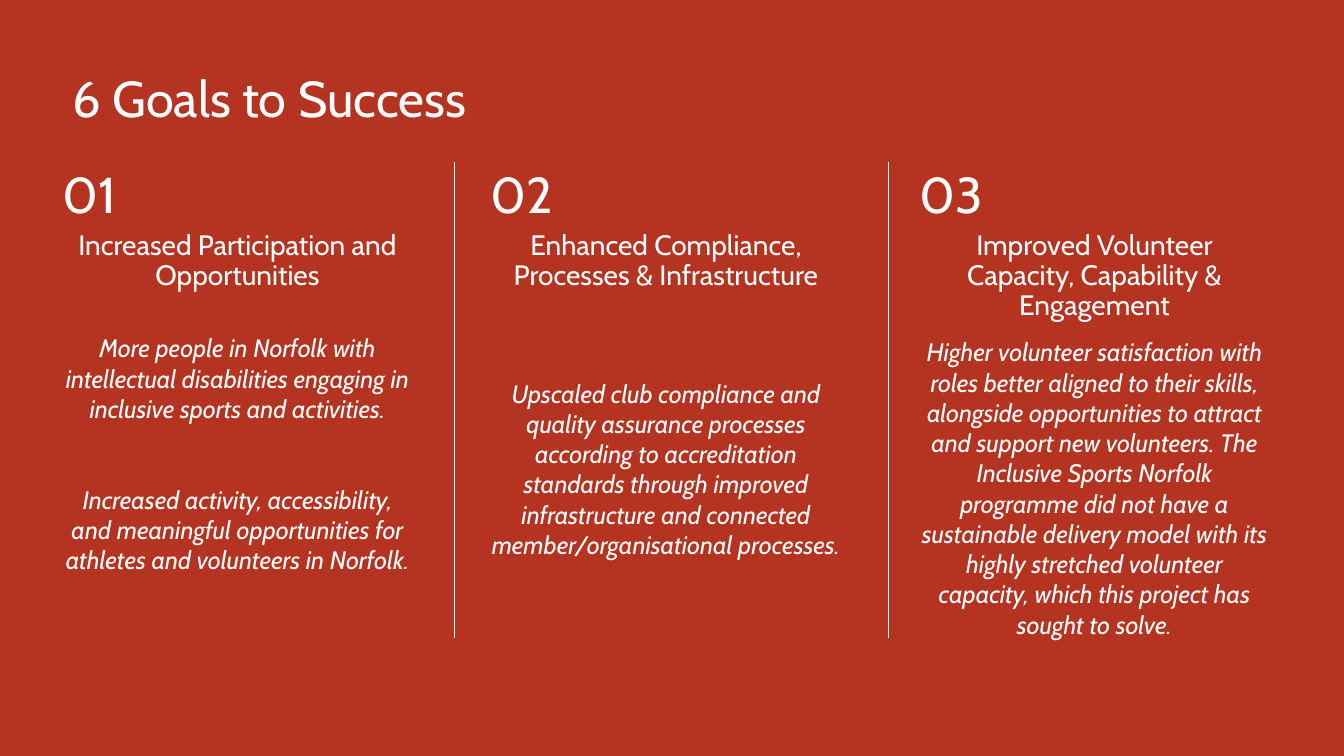
from lxml import etree
from pptx import Presentation
from pptx.dml.color import RGBColor
from pptx.enum.shapes import MSO_CONNECTOR
from pptx.enum.text import MSO_ANCHOR, MSO_AUTO_SIZE, PP_ALIGN
from pptx.oxml.ns import qn
from pptx.util import Inches, Pt

LEFT, CENTER = PP_ALIGN.LEFT, PP_ALIGN.CENTER
TOP = MSO_ANCHOR.TOP
FIXED = MSO_AUTO_SIZE.NONE
STRAIGHT = MSO_CONNECTOR.STRAIGHT

FONT = "Cabin"
COLORS = {"ground": "B53321", "text": "FFFFFF"}
WIDE, HIGH = 13.33, 7.5
MARGIN, PITCH, COL = 0.62, 4.25, 3.59
TOP_Y, END_Y = 1.61, 6.35
RULES = (4.51, 8.81)

# heading, top of the body text, body paragraphs
GOALS = [
    ("Increased Participation and Opportunities", 3.3, [
        "More people in Norfolk with intellectual disabilities engaging in "
        "inclusive sports and activities.",
        "Increased activity, accessibility, and meaningful opportunities for "
        "athletes and volunteers in Norfolk."]),
    ("Enhanced Compliance, Processes & Infrastructure", 3.75, [
        "Upscaled club compliance and quality assurance processes according "
        "to accreditation standards through improved infrastructure and "
        "connected member/organisational processes."]),
    ("Improved Volunteer Capacity, Capability & Engagement", 3.34, [
        "Higher volunteer satisfaction with roles better aligned to their "
        "skills, alongside opportunities to attract and support new "
        "volunteers. The Inclusive Sports Norfolk programme did not have a "
        "sustainable delivery model with its highly stretched volunteer "
        "capacity, which this project has sought to solve."]),
]


def color(name):
    return RGBColor.from_string(COLORS[name])


def write(shape, lines, size, align=LEFT, spacing=1.0, italic=False,
          gap=0, inset=(0, 0, 0.12, 0)):
    """Fill a shape with paragraphs; inset is left, top, right, bottom."""
    frame = shape.text_frame
    frame.word_wrap = True
    frame.auto_size = FIXED
    frame.vertical_anchor = TOP
    (frame.margin_left, frame.margin_top,
     frame.margin_right, frame.margin_bottom) = map(Inches, inset)
    for i, line in enumerate(lines):
        para = frame.add_paragraph() if i else frame.paragraphs[0]
        para.alignment = align
        para.line_spacing = spacing
        para.space_before = Pt(gap if i else 0)
        run = para.add_run()
        run.text = line
        font = run.font
        font.name, font.size, font.italic = FONT, Pt(size), italic
        font.color.rgb = color("text")


def add_text(slide, box, lines, size, **style):
    write(slide.shapes.add_textbox(*map(Inches, box)), lines, size, **style)


def add_title(slide, box, text):
    title = slide.shapes.title
    title.left, title.top, title.width, title.height = map(Inches, box)
    write(title, [text], 36, spacing=0.9, inset=(0.1, 0.05, 0.1, 0.05))


def add_goal(slide, box, number, goal):
    heading, body_y, body = goal
    x, y, w, h = box
    add_text(slide, (x, y, 1.14, 0.68), [f"{number:02}"], 36,
             spacing=0.9, inset=(0, 0.08, 0, 0))
    add_text(slide, (x, y + 0.68, w, 0.91), [heading], 20,
             align=CENTER, spacing=0.9)
    add_text(slide, (x, body_y, w, y + h - body_y), body, 18,
             align=CENTER, italic=True, gap=43.5)


def add_rule(slide, x, top, end):
    rule = slide.shapes.add_connector(STRAIGHT, *map(Inches, (x, top, x, end)))
    rule.line.color.rgb = color("text")
    rule.line.width = Pt(1)
    etree.SubElement(rule._element.spPr, qn("a:effectLst"))


def main():
    deck = Presentation()
    deck.slide_width, deck.slide_height = Inches(WIDE), Inches(HIGH)
    slide = deck.slides.add_slide(deck.slide_layouts[5])
    fill = slide.background.fill
    fill.solid()
    fill.fore_color.rgb = color("ground")
    add_title(slide, (MARGIN, 0.68, 4.88, 0.5), "6 Goals to Success")
    for i, goal in enumerate(GOALS):
        box = (MARGIN + i * PITCH, TOP_Y, COL, END_Y - TOP_Y)
        add_goal(slide, box, i + 1, goal)
    for x in RULES:
        add_rule(slide, x, TOP_Y, END_Y - 0.02)
    deck.save("out.pptx")


if __name__ == "__main__":
    main()
